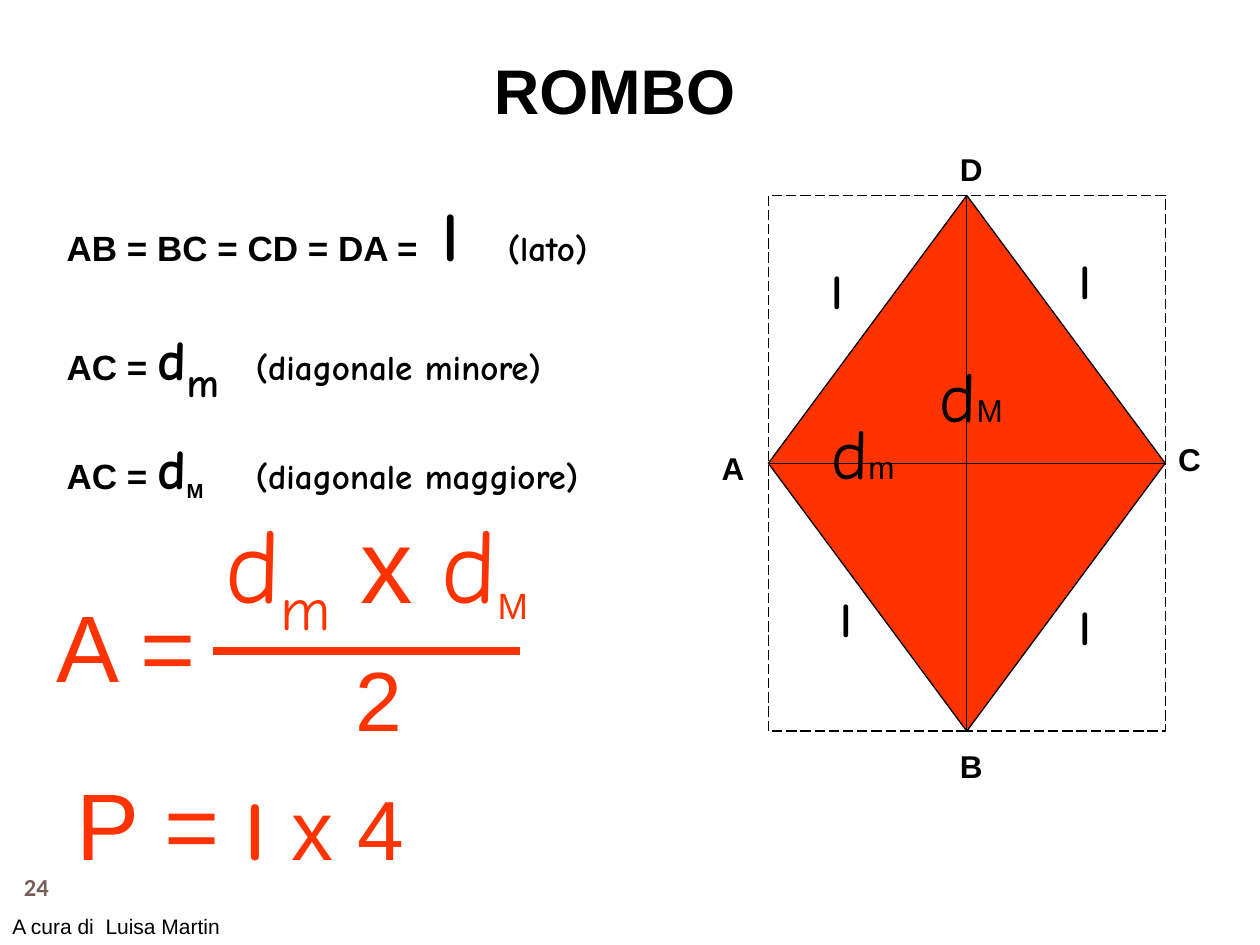
import pptx
import pptx.dml.color
import pptx.enum.dml
import pptx.enum.shapes
import pptx.enum.text
import pptx.oxml.ns
import pptx.util
from lxml import etree

Cm = pptx.util.Cm
Pt = pptx.util.Pt
Shape = pptx.enum.shapes.MSO_SHAPE
Align = pptx.enum.text.PP_ALIGN
Anchor = pptx.enum.text.MSO_ANCHOR
qn = pptx.oxml.ns.qn

SANS, HAND = "Arial", "Comic Neue"
BLACK, RED, BROWN = "000000", "FF3300", "775F55"


def paint(hue):
    """Turn a hex string into a colour."""
    return pptx.dml.color.RGBColor.from_string(hue)


def add_run(para, text, size, font=SANS, hue=BLACK, bold=False, base=0):
    """Add one formatted run, lowered by base percent."""
    run = para.add_run()
    run.text = text
    run.font.size = Pt(size)
    run.font.name = font
    run.font.bold = bold
    run.font.color.rgb = paint(hue)
    if base:
        run.font._element.set("baseline", str(base * 1000))


def set_para(para, tab=None):
    """Give a paragraph half a line before it, no bullet and a tab stop."""
    para.alignment = Align.LEFT
    props = para._p.get_or_add_pPr()
    props.set("marL", "0")
    props.set("indent", "0")
    before = etree.SubElement(props, qn("a:spcBef"))
    etree.SubElement(before, qn("a:spcPct")).set("val", "50000")
    etree.SubElement(props, qn("a:buNone"))
    if tab:
        stops = etree.SubElement(props, qn("a:tabLst"))
        stop = etree.SubElement(stops, qn("a:tab"))
        stop.set("pos", str(Cm(tab)))
        stop.set("algn", "l")


def set_frame(shape, anchor=Anchor.TOP):
    """Make the text of a shape wrap from its anchor, and return its frame."""
    frame = shape.text_frame
    frame.word_wrap = True
    frame.auto_size = pptx.enum.text.MSO_AUTO_SIZE.NONE
    frame.vertical_anchor = anchor
    return frame


def move(shape, left, top, width, height):
    """Place a shape, in centimetres."""
    shape.left, shape.top = Cm(left), Cm(top)
    shape.width, shape.height = Cm(width), Cm(height)


def add_text(slide, box, runs, hue=BLACK, bold=False):
    """Add a one-line text box made of runs."""
    shape = slide.shapes.add_textbox(*map(Cm, box))
    para = set_frame(shape).paragraphs[0]
    set_para(para)
    for run in runs:
        add_run(para, **{"hue": hue, "bold": bold, **run})


def add_form(slide, kind, box, fill=None, dash=None):
    """Add a thinly outlined preset shape."""
    shape = slide.shapes.add_shape(kind, *map(Cm, box))
    shape.shadow.inherit = False
    if fill:
        shape.fill.solid()
        shape.fill.fore_color.rgb = paint(fill)
    else:
        shape.fill.background()
    shape.line.color.rgb = paint(BLACK)
    shape.line.width = Pt(0.75)
    if dash:
        shape.line.dash_style = dash


def add_line(slide, ends, hue=BLACK, width=0.75):
    """Add a straight line without a shadow."""
    kind = pptx.enum.shapes.MSO_CONNECTOR.STRAIGHT
    line = slide.shapes.add_connector(kind, *map(Cm, ends))
    line.line.color.rgb = paint(hue)
    line.line.width = Pt(width)
    etree.SubElement(line._element.spPr, qn("a:effectLst"))


def fill_title(slide):
    """Write the title."""
    title = slide.shapes.title
    move(title, 9.7, 0.91, 6, 1.78)
    para = set_frame(title).paragraphs[0]
    set_para(para)
    add_run(para, "ROMBO", 36, bold=True)


def fill_body(slide):
    """Write the names of the side and of both diagonals."""
    body = slide.placeholders[1]
    move(body, 1.09, 3.73, 11.81, 6.02)
    frame = set_frame(body)
    rows = [
        (8.9, [("AB = BC = CD = DA =", 20), (" l", 40, HAND)], "(lato)"),
        (3.9, [("AC = ", 20), ("d", 32, HAND), ("m", 40, HAND, -25)],
         "(diagonale minore)"),
        (3.35, [("AC = ", 20), ("d", 32, HAND), ("M", 20, SANS, -25)],
         "(diagonale maggiore)"),
    ]
    for i, (tab, runs, note) in enumerate(rows):
        para = frame.add_paragraph() if i else frame.paragraphs[0]
        set_para(para, tab)
        for text, size, *rest in runs + [("\t" + note, 20, HAND)]:
            font, base = (rest + [SANS, 0][len(rest):])
            add_run(para, text, size, font, bold=True, base=base)


def draw_rhombus(slide):
    """Draw the rhombus in its box, with its diagonals and labels."""
    left, top, width, height = box = 15.49, 3.94, 8, 10.8
    midx, midy = left + width / 2, top + height / 2
    dash = pptx.enum.dml.MSO_LINE.LONG_DASH
    add_form(slide, Shape.RECTANGLE, box, dash=dash)
    add_form(slide, Shape.DIAMOND, box, fill=RED)
    add_line(slide, (midx, top, midx, top + height))
    add_line(slide, (left, midy, left + width, midy))

    corners = [("A", 14.3, 8.92), ("D", 19.1, 2.9),
               ("C", 23.5, 8.74), ("B", 19.1, 14.94)]
    for name, x, y in corners:
        add_text(slide, (x, y, 1.4, 1.02), [dict(text=name, size=18)],
                 bold=True)
    sides = [(16.51, 5.13), (16.69, 11.73), (21.51, 11.91), (21.51, 4.93)]
    for x, y in sides:
        add_text(slide, (x, y, 0.99, 1.45),
                 [dict(text="l", size=28, font=HAND)], bold=True)
    for name, x, y in [("M", 18.69, 6.98), ("m", 16.51, 8.13)]:
        add_text(slide, (x, y, 3, 1.96),
                 [dict(text="d", size=40, font=HAND),
                  dict(text=name, size=18)])


def write_rules(slide):
    """Write the formulas for area and perimeter."""
    add_text(slide, (4.29, 9.93, 7.59, 2.79),
             [dict(text="d", size=60, font=HAND),
              dict(text="m", size=60, font=HAND, base=-25),
              dict(text=" x ", size=60),
              dict(text="d", size=60, font=HAND),
              dict(text="M", size=36, base=-25)], RED)
    add_line(slide, (4.29, 13.13, 10.49, 13.13), RED, 4.5)
    add_text(slide, (6.91, 12.93, 2.59, 2.29), [dict(text="2", size=48)], RED)
    add_text(slide, (0.89, 11.73, 3.78, 2.54),
             [dict(text="A =", size=54)], RED)
    add_text(slide, (1.3, 15.32, 8, 2.54),
             [dict(text="P = ", size=54),
              dict(text="l", size=48, font=HAND, bold=True),
              dict(text=" ", size=54),
              dict(text="x 4", size=48)], RED)


def add_foot(slide):
    """Add the page number and the author."""
    shape = slide.shapes.add_textbox(Cm(0), Cm(17.35), Cm(1.47), Cm(1.07))
    para = set_frame(shape, Anchor.MIDDLE).paragraphs[0]
    para.alignment = Align.CENTER
    add_run(para, "24", 14, "Calibri", BROWN, True)
    add_text(slide, (0, 18.29, 4.8, 0.76),
             [dict(text="A cura di  Luisa Martin", size=12)])


def main():
    """Build and save the slide."""
    deck = pptx.Presentation()
    deck.slide_width, deck.slide_height = Cm(25.4), Cm(19.05)
    slide = deck.slides.add_slide(deck.slide_layouts[1])
    fill_title(slide)
    draw_rhombus(slide)
    fill_body(slide)
    write_rules(slide)
    add_foot(slide)
    deck.save("out.pptx")


if __name__ == "__main__":
    main()
